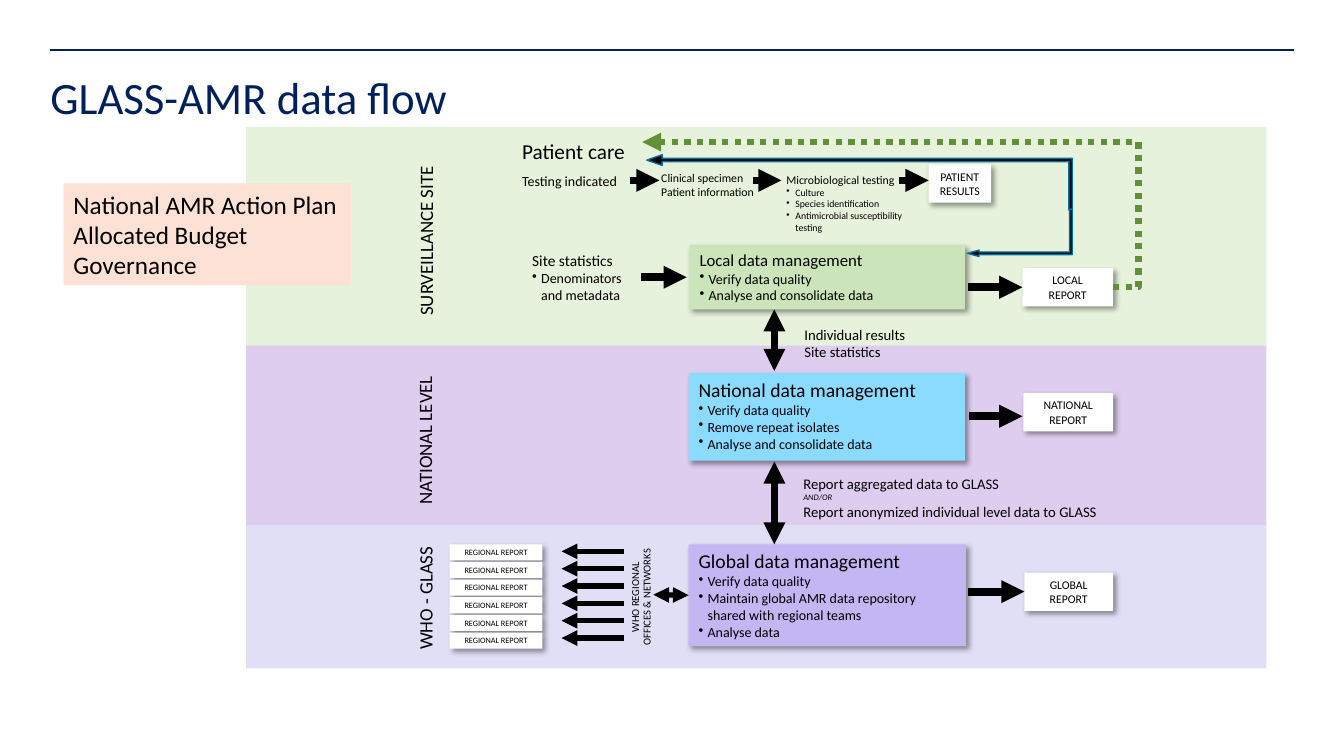
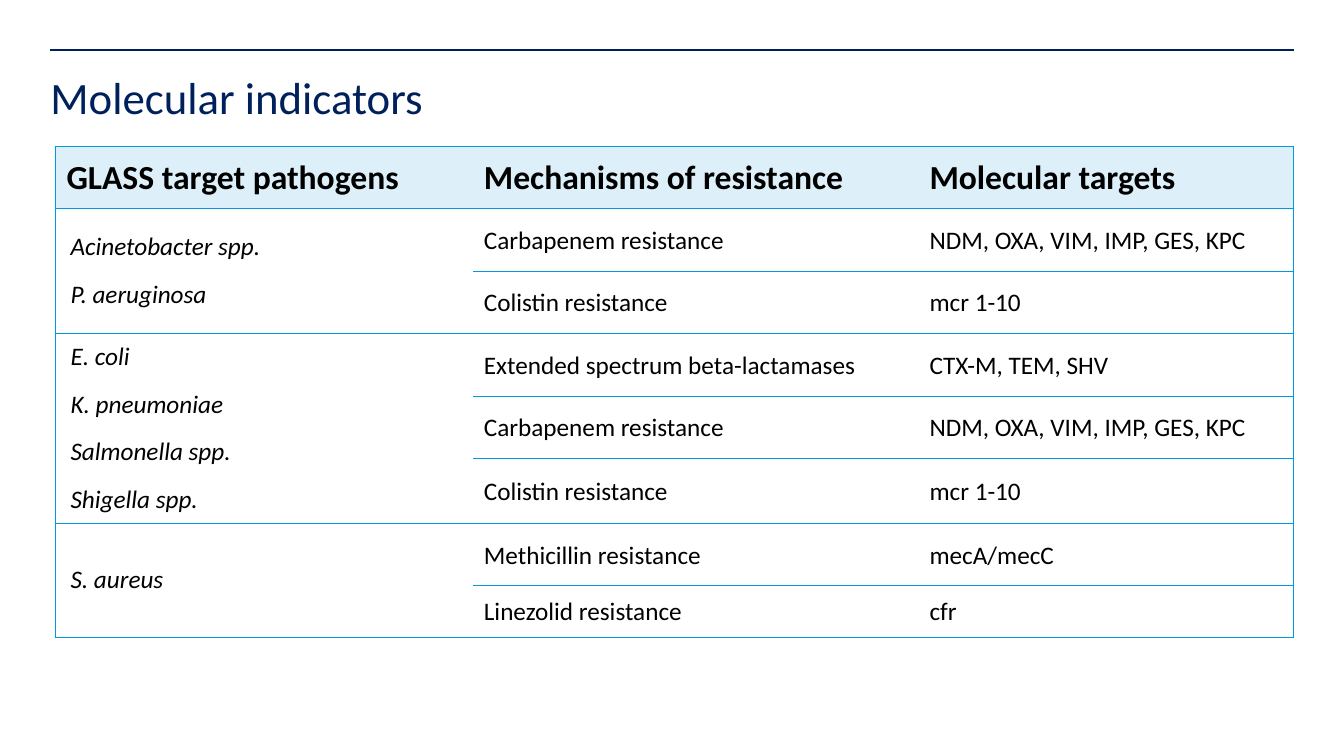
import pptx
import pptx.util
import pptx.dml.color
import pptx.enum.dml
import pptx.enum.shapes
import pptx.enum.text
import pptx.oxml
import pptx.oxml.ns
from lxml import etree

Inches, Pt = pptx.util.Inches, pptx.util.Pt
qn = pptx.oxml.ns.qn
Shape = pptx.enum.shapes.MSO_SHAPE
Link = pptx.enum.shapes.MSO_CONNECTOR
Align = pptx.enum.text.PP_ALIGN
Anchor = pptx.enum.text.MSO_ANCHOR
Fit = pptx.enum.text.MSO_AUTO_SIZE


class Theme:
    font = "Calibri"
    navy, black, white = "00205C", "000000", "FFFFFF"
    site, nation, globe = "E6F2DC", "DFCDEF", "E1DFF6"
    leaf, sky, violet = "CCE4B9", "8BDBFF", "C3B7F3"
    peach, green, edge = "FCE1D4", "609138", "0071A3"
    grid, header = "0099DD", "DDEFF9"
    title, head, cell, plan = 32, 24, 18, 18
    care, side, panel, local = 15.2, 13.5, 14, 12
    stats, note, body, card = 11, 10.5, 10, 8.4
    office, list, region, tiny = 7.6, 7, 5.9, 6
    thick, mid, thin, dash = 5.5, 5.25, 3.75, 4.5


T = Theme

BANDS = [
    (5.21, 1.42, T.globe),
    (3.42, 1.79, T.nation),
    (1.26, 2.17, T.site),
]
SIDES = [
    ((3.37, 2.21, 1.71, 0.33), "SURVEILLANCE SITE"),
    ((3.47, 4.19, 1.49, 0.33), "NATIONAL LEVEL"),
    ((3.6, 5.76, 1.24, 0.33), "WHO - GLASS"),
]
LABELS = [
    ((5.08, 1.32, 1.23, 0.36), True, [("Patient care", T.care, "")]),
    ((5.08, 1.66, 1.29, 0.27), True, [("Testing indicated", T.body, "")]),
    ((6.46, 1.64, 1.15, 0.39), True,
     [("Clinical specimen\nPatient information", T.card, "")]),
    ((7.7, 1.66, 1.45, 0.71), True, [
        ("Microbiological testing", T.card, ""),
        ("Culture", T.list, "•"),
        ("Species identification", T.list, "•"),
        ("Antimicrobial susceptibility testing", T.list, "•")]),
    ((5.18, 2.44, 1.16, 0.62), True, [
        ("Site statistics", T.stats, ""),
        ("Denominators\nand metadata", T.body, "•")]),
    ((7.88, 3.18, 1.22, 0.45), False,
     [("Individual results\nSite statistics", T.note, "")]),
    ((7.87, 4.66, 3.17, 0.56), False, [
        ("Report aggregated data to GLASS", T.note, ""),
        ("AND/OR", T.tiny, "i"),
        ("Report anonymized individual level data to GLASS", T.note, "")]),
]
PANELS = {
    "local": ((6.84, 2.43, 2.73, 0.64), T.leaf, T.local, "Local data management",
              ["Verify data quality", "Analyse and consolidate data"]),
    "nation": ((6.83, 3.7, 2.74, 0.87), T.sky, T.panel, "National data management",
               ["Verify data quality", "Remove repeat isolates",
                "Analyse and consolidate data"]),
    "globe": ((6.83, 5.4, 2.75, 1.01), T.violet, T.panel, "Global data management",
              ["Verify data quality",
               "Maintain global AMR data repository shared with regional teams",
               "Analyse data"]),
}
CARDS = {
    "patient": ((9.21, 1.63, 0.62, 0.38), "PATIENT\nRESULTS"),
    "local": ((10.14, 2.66, 0.9, 0.38), "LOCAL\nREPORT"),
    "nation": ((10.15, 3.9, 0.89, 0.38), "NATIONAL\nREPORT"),
    "globe": ((10.16, 5.68, 0.88, 0.38), "GLOBAL\nREPORT"),
}
REGIONS = 6
FLOWS = [
    (6.36, 2.75, 6.81, 2.75),
    (6.25, 1.79, 6.54, 1.79),
    (7.47, 1.79, 7.75, 1.79),
    (8.92, 1.79, 9.21, 1.79),
    (9.61, 4.13, 10.14, 4.13),
]
LOOPS = [
    ((8.25, -0.3, 0.55, 4.22), 270, False, (0.061, 0.096, 0.277)),
    ((9.88, 1.79, 0.47, 1.04), 90, True, (0.056, 0.067, 0.247)),
]
PLAN = ["National AMR Action Plan", "Allocated Budget", "Governance"]

HEADS = ["GLASS target pathogens", "Mechanisms of resistance", "Molecular targets"]
CARBA = ("Carbapenem resistance", "NDM, OXA, VIM, IMP, GES, KPC")
COLIS = ("Colistin resistance", "mcr 1-10")
GROUPS = [
    (["Acinetobacter spp.", "P. aeruginosa"], [CARBA, COLIS]),
    (["E. coli", "K. pneumoniae", "Salmonella spp.", "Shigella spp."],
     [("Extended spectrum beta-lactamases", "CTX-M, TEM, SHV"), CARBA, COLIS]),
    (["S. aureus"],
     [("Methicillin resistance", "mecA/mecC"), ("Linezolid resistance", "cfr")]),
]
COLS = [4.14, 4.42, 3.72]
ROWS = [0.62] * 7 + [0.51]


def color(code):
    return pptx.dml.color.RGBColor.from_string(code)


def add(parent, tag, **attrs):
    return etree.SubElement(parent, qn(tag), attrs)


def style(para, size, ink=T.black, bold=False, slant=False):
    for run in para.runs:
        font = run.font
        font.name, font.size, font.bold, font.italic = T.font, Pt(size), bold, slant
        font.color.rgb = color(ink)


def write(frame, rows, align=Align.LEFT):
    frame.text = "\n".join("" for _ in rows)
    for para, (text, size, mark) in zip(frame.paragraphs, rows):
        para.text = text
        para.alignment = align
        if mark == "•":
            props = para._p.get_or_add_pPr()
            props.set("marL", str(Inches(0.09)))
            props.set("indent", str(-Inches(0.09)))
            add(props, "a:buChar", char="•")
        style(para, size, slant=mark == "i")


def label(slide, box, rows, wrap=True, turn=0, align=Align.LEFT):
    shape = slide.shapes.add_textbox(*map(Inches, box))
    shape.rotation = turn
    write(shape.text_frame, rows, align)
    shape.text_frame.word_wrap = wrap
    shape.text_frame.auto_size = Fit.SHAPE_TO_FIT_TEXT
    return shape


def block(slide, box, fill, kind=Shape.RECTANGLE, shade=False):
    shape = slide.shapes.add_shape(kind, *map(Inches, box))
    shape.fill.solid()
    shape.fill.fore_color.rgb = color(fill)
    shape.line.fill.background()
    shape.shadow.inherit = False
    if shade:
        effect = shape.element.spPr.find(qn("a:effectLst"))
        cast = add(effect, "a:outerShdw", blurRad=str(Pt(4)), dist=str(Pt(3)),
                   dir="2700000", algn="tl", rotWithShape="0")
        add(add(cast, "a:srgbClr", val=T.black), "a:alpha", val="40000")
    return shape


def card(slide, box, text, size):
    shape = block(slide, box, T.white, shade=True)
    write(shape.text_frame, [(text, size, "")], Align.CENTER)
    shape.text_frame.vertical_anchor = Anchor.MIDDLE
    return shape


def panel(slide, box, fill, size, head, points):
    shape = block(slide, box, fill, shade=True)
    write(shape.text_frame, [(head, size, "")] + [(p, T.body, "•") for p in points])
    shape.text_frame.vertical_anchor = Anchor.TOP
    shape.text_frame.auto_size = Fit.SHAPE_TO_FIT_TEXT
    return shape


def line(slide, ends, width, ink=T.black, tips=("tail",), kind=Link.STRAIGHT, dash=None):
    link = slide.shapes.add_connector(kind, *map(Inches, ends))
    link.line.width = Pt(width)
    link.line.color.rgb = color(ink)
    if dash:
        link.line.dash_style = dash
    for tip in tips:
        add(link.line._get_or_add_ln(), f"a:{tip}End", type="triangle")
    add(link.element.spPr, "a:effectLst")
    return link


def start(deck, layout, text):
    slide = deck.slides.add_slide(layout)
    title = slide.shapes.title
    title.text_frame.text = text
    para = title.text_frame.paragraphs[0]
    para.alignment = Align.LEFT
    para.line_spacing = 0.9
    style(para, T.title, T.navy)
    return slide


def frame_layout(layout):
    title = next(h for h in layout.placeholders if h.placeholder_format.idx == 0)
    title.left, title.top, title.width, title.height = map(
        Inches, (0.5, 0.75, 12.33, 1.1))
    frame = title.text_frame
    frame.margin_left = frame.margin_right = frame.margin_top = frame.margin_bottom = 0
    frame.vertical_anchor = Anchor.TOP


def flow(slide):
    for top, high, fill in BANDS:
        block(slide, (2.44, top, 10.12, high), fill)
    for box, wrap, rows in LABELS:
        label(slide, box, rows, wrap)
    for box, text in SIDES:
        label(slide, box, [(text, T.side, "")], False, 270)
    cards = {key: card(slide, *item, T.card) for key, item in CARDS.items()}
    panels = {key: panel(slide, *item) for key, item in PANELS.items()}

    for box, turn, flip, bends in LOOPS:
        loop = block(slide, box, T.black, Shape.BENT_UP_ARROW)
        loop.rotation = turn
        loop.line.width = Pt(1)
        loop.line.color.rgb = color(T.edge)
        for i, bend in enumerate(bends):
            loop.adjustments[i] = bend
        if flip:
            loop.element.spPr.find(qn("a:xfrm")).set("flipV", "1")

    for ends in FLOWS:
        line(slide, ends, T.thick)
    for key, y in (("local", 2.85), ("globe", 5.87)):
        line(slide, (9.6, y, 10.15, y), T.thick).end_connect(cards[key], 1)
    both = ("head", "tail")
    for top, end in ((3.07, 3.68), (4.58, 5.4)):
        line(slide, (7.68, top, 7.68, end), T.mid, tips=both)

    back = line(slide, (11.04, 2.85, 6.37, 1.41), T.dash, T.green, kind=Link.ELBOW,
                dash=pptx.enum.dml.MSO_LINE.ROUND_DOT)
    shape = back.element.spPr.find(qn("a:prstGeom"))
    guides = shape.find(qn("a:avLst"))
    if guides is None:
        guides = add(shape, "a:avLst")
    add(guides, "a:gd", name="adj1", fmla="val -5400")

    for i in range(REGIONS):
        card(slide, (4.46, 5.4 + 0.175 * i, 0.92, 0.16), "REGIONAL REPORT", T.region)
        y = 5.47 + 0.172 * i
        line(slide, (6.19, y, 5.57, y), T.thin)
    line(slide, (6.48, 5.9, 6.83, 5.9), T.thin, tips=both).end_connect(panels["globe"], 1)
    office = label(slide, (5.77, 5.76, 1.18, 0.33),
                   [("WHO REGIONAL\nOFFICES & NETWORKS", T.office, "")],
                   False, 270, Align.CENTER)
    office.text_frame.paragraphs[0].line_spacing = Pt(8.3)

    plan = block(slide, (0.63, 1.82, 2.85, 1.01), T.peach)
    write(plan.text_frame, [(text, T.plan, "") for text in PLAN])
    plan.text_frame.word_wrap = False
    plan.text_frame.auto_size = Fit.SHAPE_TO_FIT_TEXT


def fill_cell(cell, rows, size, pads, bold=False, slant=False):
    cell.margin_left = cell.margin_right = Inches(pads[0])
    cell.margin_top, cell.margin_bottom = Inches(pads[1]), Inches(pads[2])
    cell.vertical_anchor = Anchor.MIDDLE
    cell.text_frame.text = "\n".join(rows)
    paras = cell.text_frame.paragraphs
    for i, para in enumerate(paras):
        para.space_before = Pt(6 if i else 0)
        para.space_after = Pt(6 if i < len(paras) - 1 else 0)
        style(para, size, bold=bold, slant=slant)


def border(cell, sides):
    props = cell._tc.get_or_add_tcPr()
    for i, side in enumerate("LRTB"):
        edge = etree.Element(qn(f"a:ln{side}"), w=str(Pt(0.5)))
        if side in sides:
            add(add(edge, "a:solidFill"), "a:srgbClr", val=T.grid)
        else:
            add(edge, "a:noFill")
        props.insert(i, edge)


def targets(slide):
    box = map(Inches, (0.55, 1.45, sum(COLS), sum(ROWS)))
    table = slide.shapes.add_table(len(ROWS), len(COLS), *box).table
    table.first_row = table.horz_banding = False
    table._tbl.tblPr.find(qn("a:tableStyleId")).text = "{2D5ABB26-0587-4C30-8999-92F81FD0307C}"
    for column, wide in zip(table.columns, COLS):
        column.width = Inches(wide)
    for row, high in zip(table.rows, ROWS):
        row.height = Inches(high)

    slim, wide = (0.11, 0.02, 0), (0.15, 0.08, 0.08)
    for c, text in enumerate(HEADS):
        fill_cell(table.cell(0, c), [text], T.head, slim, bold=True)
    top = 1
    for germs, pairs in GROUPS:
        last = top + len(pairs) - 1
        table.cell(top, 0).merge(table.cell(last, 0))
        fill_cell(table.cell(top, 0), germs, T.cell, wide, slant=True)
        for r, pair in enumerate(pairs, top):
            for c, text in enumerate(pair, 1):
                fill_cell(table.cell(r, c), [text], T.cell, slim)
        top = last + 1

    for r in range(len(ROWS)):
        for c, sides in enumerate(("LTB", "TB", "RTB")):
            cell = table.cell(r, c)
            if r:
                cell.fill.background()
            else:
                cell.fill.solid()
                cell.fill.fore_color.rgb = color(T.header)
            border(cell, "L" if cell.is_spanned and r < len(ROWS) - 1 and
                   table.cell(r + 1, c).is_spanned else sides.replace("T", "")
                   if cell.is_spanned else sides)


def main():
    deck = pptx.Presentation()
    deck.slide_width, deck.slide_height = Inches(13.33), Inches(7.5)
    layout = deck.slide_layouts[5]
    frame_layout(layout)
    first = start(deck, layout, "GLASS-AMR data flow")
    rule = line(first, (0.5, 0.5, 12.83, 0.5), 1.5, T.navy, tips=())
    layout.shapes.element.append(rule.element)
    flow(first)
    targets(start(deck, layout, "Molecular indicators"))
    deck.save("out.pptx")


if __name__ == "__main__":
    main()
